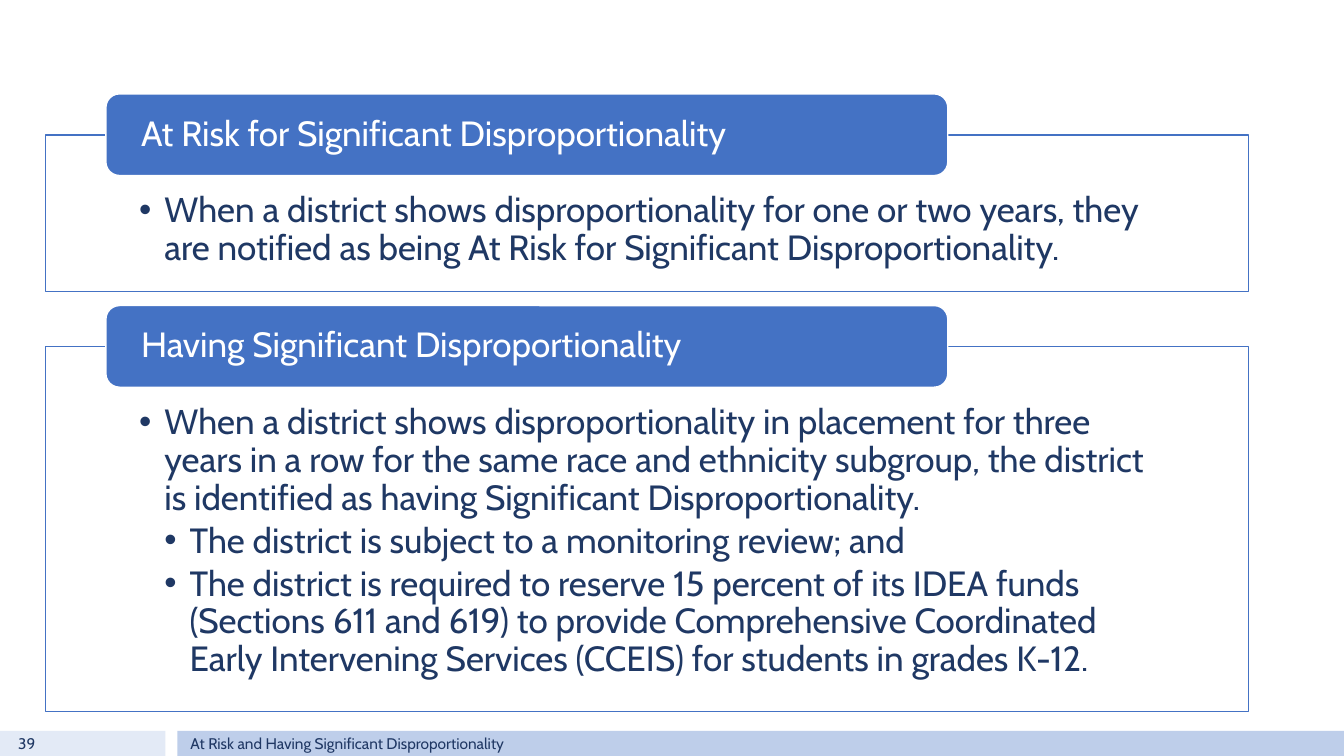
from lxml import etree
from pptx import Presentation, util as u
from pptx.dml.color import RGBColor
from pptx.enum import shapes, text
from pptx.oxml.ns import qn

INK = {"page": "FFFFFF", "blue": "4472C4", "navy": "1F3864", "foot": "203864",
       "pale": "E3EAF6", "bar": "BECEEA"}


class Deck:
    font = "Cabin"
    big, small = 25, 11

    def __init__(self, wide, high, layout):
        self.prs = Presentation()
        self.prs.slide_width = u.Inches(wide)
        self.prs.slide_height = u.Inches(high)
        self.slide = self.prs.slides.add_slide(self.prs.slide_layouts[layout])
        self.holders = list(self.slide.placeholders)

    def place(self, shape, left, top, width, height):
        wide, high = self.prs.slide_width / 100, self.prs.slide_height / 100
        shape.left, shape.top = int(left * wide), int(top * high)
        shape.width, shape.height = int(width * wide), int(height * high)

    def paint(self, shape, fill, line=None):
        shape.fill.solid()
        shape.fill.fore_color.rgb = RGBColor.from_string(INK[fill])
        if line:
            shape.line.color.rgb = RGBColor.from_string(INK[line])
            shape.line.width = u.Pt(1)
        else:
            shape.line.fill.background()

    def letter(self, shape, words, size, ink, pad, anchor="MIDDLE", spacing=1):
        frame = shape.text_frame
        frame.text = words
        frame.word_wrap = True
        frame.auto_size = text.MSO_AUTO_SIZE.NONE
        frame.vertical_anchor = text.MSO_ANCHOR[anchor]
        (frame.margin_left, frame.margin_top,
         frame.margin_right, frame.margin_bottom) = map(u.Inches, pad)
        for para in frame.paragraphs:
            para.alignment = text.PP_ALIGN.LEFT
            para.line_spacing = spacing
            para.space_before = u.Pt(0)
            for run in para.runs:
                run.font.name, run.font.size = self.font, u.Pt(size)
                run.font.color.rgb = RGBColor.from_string(INK[ink])
        return frame

    def shape(self, kind, area):
        shape = self.slide.shapes.add_shape(shapes.MSO_SHAPE[kind], 0, 0, 0, 0)
        shape.shadow.inherit = False
        self.place(shape, *area)
        return shape

    def strip(self, shape, words, fill, left):
        self.paint(shape, fill)
        self.letter(shape, words, self.small, "foot", (left, 0, 0, 0))

    def title(self, words, area):
        self.place(self.holders[0], *area)
        self.strip(self.holders[0], words, "bar", 0.13)

    def number(self, words, area):
        self.strip(self.shape("RECTANGLE", area), words, "pale", 0.18)

    def list(self, holder, items, area):
        self.place(holder, *area)
        self.paint(holder, "page", "blue")
        fill = holder.element.spPr.find(qn("a:solidFill"))
        etree.SubElement(fill[0], qn("a:alpha"), val="90000")
        words = "\n".join(line for level, line in items)
        frame = self.letter(holder, words, self.big, "navy",
                            (0.93, 0.57, 0.93, 0.19), "TOP", 0.9)
        for para, (level, line) in zip(frame.paragraphs, items):
            para.level = level
            para.space_after = u.Pt(0.15 * self.big)
            props = para._p.get_or_add_pPr()
            props.set("marL", str(u.Inches(0.25 * (level + 1))))
            props.set("indent", str(u.Inches(-0.25)))
            etree.SubElement(props, qn("a:buChar"), char="•")

    def head(self, words, area):
        shape = self.shape("ROUNDED_RECTANGLE", area)
        self.paint(shape, "blue", "page")
        self.letter(shape, words, self.big, "page", (0.31, 0, 0.31, 0), spacing=0.9)


PANELS = [
    ("At Risk for Significant Disproportionality", 20.67, [
        (0, "When a district shows disproportionality for one or two years, they "
            "are notified as being At Risk for Significant Disproportionality.")]),
    ("Having Significant Disproportionality", 48.27, [
        (0, "When a district shows disproportionality in placement for three "
            "years in a row for the same race and ethnicity subgroup, the district "
            "is identified as having Significant Disproportionality."),
        (1, "The district is subject to a monitoring review; and"),
        (1, "The district is required to reserve 15 percent of its IDEA funds "
            "(Sections 611 and 619) to provide Comprehensive Coordinated "
            "Early Intervening Services (CCEIS) for students in grades K-12.")]),
]


def main():
    deck = Deck(13.33, 7.5, 3)
    top, gap, rise = 17.87, 7.33, 5.45
    for holder, (name, high, items) in zip(deck.holders[1:], PANELS):
        deck.list(holder, items, (3.38, top, 89.5, high))
        deck.head(name, (7.88, top - rise, 62.64, 10.8))
        top += high + gap
    deck.number("39", (0, 96.67, 12.3, 3.33))
    deck.title("At Risk and Having Significant Disproportionality",
               (13.2, 96.67, 86.8, 3.33))
    deck.prs.save("out.pptx")


if __name__ == "__main__":
    main()
